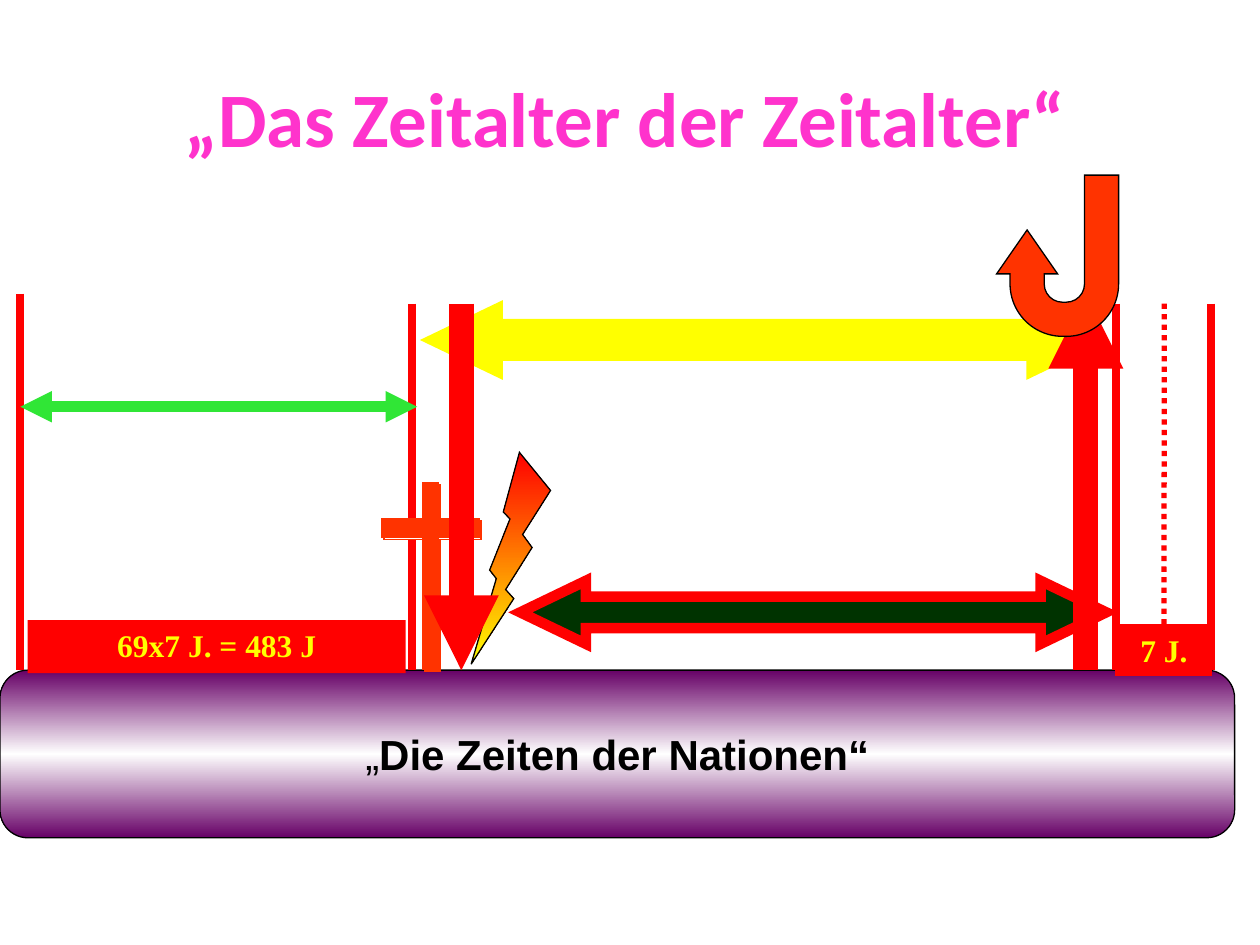
from copy import deepcopy

from lxml import etree
from pptx import Presentation
from pptx.dml.color import RGBColor
from pptx.enum.dml import MSO_LINE
from pptx.enum.shapes import MSO_CONNECTOR, MSO_SHAPE
from pptx.enum.text import MSO_ANCHOR, PP_ALIGN
from pptx.oxml.ns import qn
from pptx.util import Cm, Pt

STRAIGHT = MSO_CONNECTOR.STRAIGHT
RECTANGLE = MSO_SHAPE.RECTANGLE
ROUNDED = MSO_SHAPE.ROUNDED_RECTANGLE
BOLT = MSO_SHAPE.LIGHTNING_BOLT
DOUBLE_ARROW = MSO_SHAPE.LEFT_RIGHT_ARROW
UTURN = MSO_SHAPE.U_TURN_ARROW
DOTTED = MSO_LINE.ROUND_DOT
CENTER = PP_ALIGN.CENTER
MIDDLE = MSO_ANCHOR.MIDDLE
TOP = MSO_ANCHOR.TOP

COLORS = {
    "pink": "FF33CC", "black": "000000", "white": "FFFFFF", "purple": "660066",
    "red": "FF0000", "yellow": "FFFF00", "green": "30E636",
    "orange": "FF3300", "forest": "003300",
}
HEX = {name: RGBColor.from_string(value) for name, value in COLORS.items()}

GROUND = 13.51
LINE_TOP = 6.12


def write(box, *texts, font, size, color, bold=(True,), anchor=MIDDLE, wrap=True):
    frame = box.text_frame
    frame.word_wrap = wrap
    frame.vertical_anchor = anchor
    para = frame.paragraphs[0]
    para.alignment = CENTER
    for text, heavy in zip(texts, bold):
        span = para.add_run()
        span.text = text
        span.font.name = font
        span.font.size = Pt(size)
        span.font.bold = heavy
        span.font.color.rgb = HEX[color]


def draw(kind, left, top, width, height, fills, outline=None, weight=0.75, adjust=()):
    shape = page.shapes.add_shape(kind, Cm(left), Cm(top), Cm(width), Cm(height))
    shape.shadow.inherit = False
    for index, value in enumerate(adjust):
        shape.adjustments[index] = value
    if len(fills) == 1:
        shape.fill.solid()
        shape.fill.fore_color.rgb = HEX[fills[0]]
    else:
        shape.fill.gradient()
        shape.fill.gradient_angle = 270
        stop_list = shape._element.spPr.find(".//" + qn("a:gsLst"))
        while len(stop_list) < len(fills):
            stop_list.append(deepcopy(stop_list[0]))
        for index, name in enumerate(fills):
            stop_list[index].set("pos", str(100000 * index // (len(fills) - 1)))
            shape.fill.gradient_stops[index].color.rgb = HEX[name]
    if outline:
        shape.line.color.rgb = HEX[outline]
        shape.line.width = Pt(weight)
        miter = etree.SubElement(shape.line._get_or_add_ln(), qn("a:miter"))
        miter.set("lim", "800000")
    else:
        shape.line.fill.background()
    return shape


deck = Presentation()
deck.slide_width = Cm(25.4)
deck.slide_height = Cm(19.05)
page = deck.slides.add_slide(deck.slide_layouts[6])

title = page.shapes.add_textbox(Cm(0.51), Cm(0.76), Cm(24.21), Cm(3.18))
write(title, "„Das Zeitalter der Zeitalter“", font="Calibri", size=44, color="pink")

band = draw(ROUNDED, 0, GROUND, 24.89, 3.38, ["purple", "white", "purple"], "black", adjust=[0.167])
write(band, "„", "Die Zeiten der Nationen“", font="Arial", size=24, color="black",
      bold=(False, True), wrap=False)

lines = {}
for name, x1, y1, x2, y2, color, weight, ends in [
    ("start", 0.41, 5.92, 0.41, GROUND, "red", 4.5, []),
    ("cut", 8.31, LINE_TOP, 8.31, GROUND, "red", 4.5, []),
    ("weeks", 0.41, 8.2, 8.41, 8.2, "green", 6, ["headEnd", "tailEnd"]),
    ("end", 24.41, LINE_TOP, 24.41, GROUND, "red", 4.5, []),
    ("return", 22.5, LINE_TOP, 22.5, GROUND, "red", 4.5, []),
    ("half", 23.47, LINE_TOP, 23.47, 12.6, "red", 3, []),
    ("descent", 9.3, LINE_TOP, 9.3, GROUND, "red", 14.25, ["tailEnd"]),
    ("ascent", 21.89, GROUND, 21.89, 5.92, "red", 14.25, ["tailEnd"]),
]:
    if name == "weeks":
        weeks_box = draw(RECTANGLE, 0.56, 12.5, 7.62, 1.07, ["red"])
        write(weeks_box, "69x7 J. = 483 J", font="Times New Roman", size=18,
              color="yellow", anchor=TOP)
    elif name == "end":
        for shift, color_name in [(0.04, "white"), (0, "orange")]:
            draw(RECTANGLE, 8.53 + shift, 9.73 + shift, 0.3, 3.76, [color_name], "orange")
            draw(RECTANGLE, 7.7 + shift, 10.46 + shift, 1.96, 0.38, [color_name], "orange")
        bolt = draw(BOLT, 9.5, 9.12, 1.6, 4.27, ["red", "yellow"], "black")
        bolt._element.spPr.find(qn("a:xfrm")).set("flipH", "1")
        draw(DOUBLE_ARROW, 10.49, 11.71, 11.81, 1.27, ["forest"], "red", 6, [0.5, 1.04])
        seven_box = draw(RECTANGLE, 22.5, 12.6, 1.93, 1.02, ["red"], "red")
        write(seven_box, "7 J.", font="Times New Roman", size=18, color="yellow", anchor=TOP)
    elif name == "half":
        draw(DOUBLE_ARROW, 8.71, 6.22, 13.41, 1.27, ["yellow"], "yellow", 6, [0.5, 1.04])

    line = page.shapes.add_connector(STRAIGHT, Cm(x1), Cm(y1), Cm(x2), Cm(y2))
    line.line.color.rgb = HEX[color]
    line.line.width = Pt(weight)
    etree.SubElement(line._element.spPr, qn("a:effectLst"))
    for end in ends:
        etree.SubElement(line.line._get_or_add_ln(), qn("a:" + end)).set("type", "triangle")
    lines[name] = line

lines["half"].line.dash_style = DOTTED
lines["half"].end_connect(seven_box, 0)

uturn = draw(UTURN, 20.09, 3.53, 2.46, 3.25, ["orange"], "black",
             adjust=[0.28, 0.28, 0.36, 0.43, 0.66])
uturn.rotation = 180

deck.save("out.pptx")
